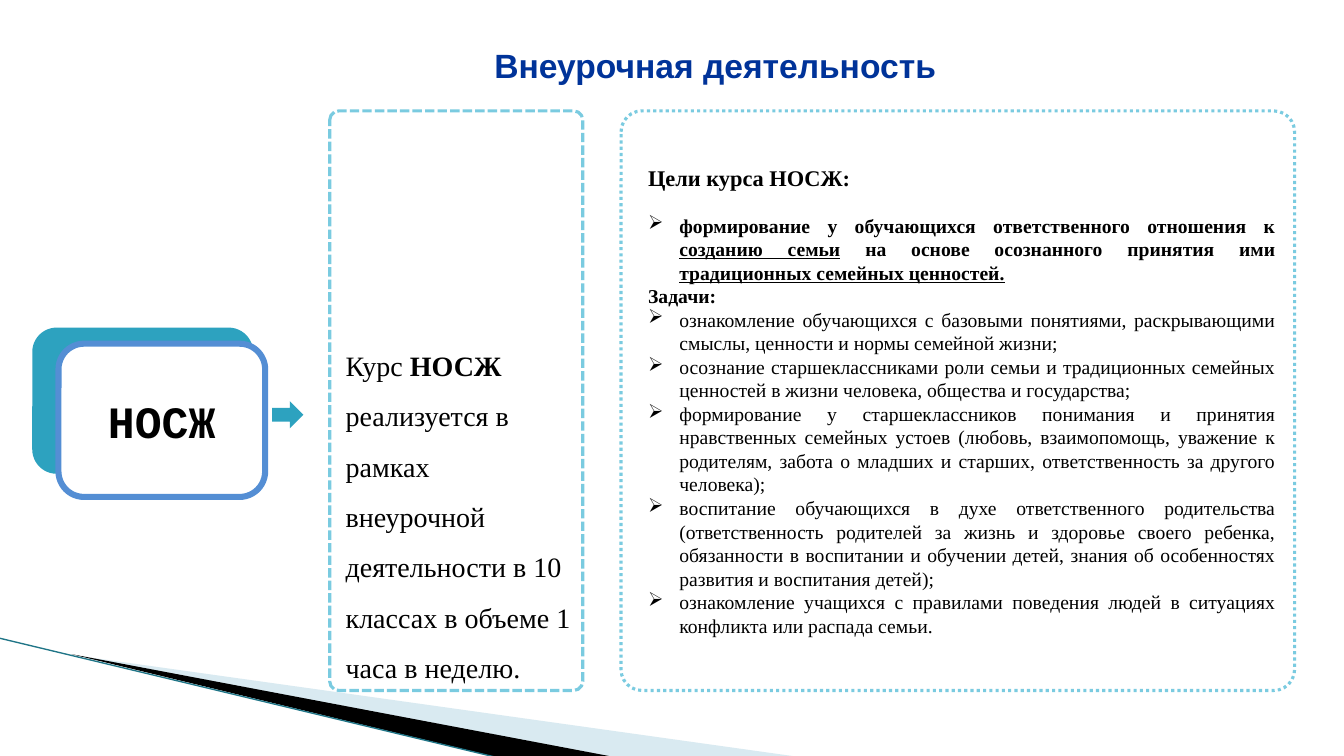
from dataclasses import dataclass

from lxml import etree
from pptx import Presentation
from pptx.dml.color import RGBColor
from pptx.enum import dml, shapes, text
from pptx.oxml.ns import qn
from pptx.util import Inches, Pt


@dataclass(frozen=True)
class Theme:
    teal: str = "2DA2BF"
    frame: str = "7ACBE0"
    badge: str = "548ED4"
    title: str = "003399"
    black: str = "000000"
    white: str = "FFFFFF"
    wedge: str = "A0CBDC"
    edge: str = "1F7587"
    sans: str = "Arial"
    mono: str = "Courier New"
    serif: str = "Times New Roman"
    badge_size: int = 32
    title_size: int = 24
    course_size: int = 20
    heading_size: int = 16
    body_size: int = 14


SHAPE = shapes.MSO_SHAPE
ALIGN = text.PP_ALIGN
DASH = dml.MSO_LINE


class SlideBuilder:
    def __init__(self, prs, theme):
        self.theme = theme
        self.s = prs.slides.add_slide(prs.slide_layouts[6])

    def style(self, sp, fill=None, line=None, width=1, dash=None):
        sp.shadow.inherit = False
        if fill:
            sp.fill.solid()
            sp.fill.fore_color.rgb = RGBColor.from_string(fill)
        else:
            sp.fill.background()
        if line:
            sp.line.color.rgb = RGBColor.from_string(line)
            sp.line.width = Pt(width)
            if dash:
                sp.line.dash_style = dash
        else:
            sp.line.fill.background()
        return sp

    def shape(self, kind, box, radius=None, **look):
        sp = self.s.shapes.add_shape(kind, *map(Inches, box))
        if radius is not None:
            sp.adjustments[0] = radius
        return self.style(sp, **look)

    def wedge(self, points, fill, alpha=None):
        """Draw a filled polygon; alpha is its opacity in percent."""
        start, *rest = [(Inches(x), Inches(y)) for x, y in points]
        builder = self.s.shapes.build_freeform(*start)
        builder.add_line_segments(rest, close=True)
        sp = self.style(builder.convert_to_shape(), fill=fill)
        if alpha:
            color = sp._element.spPr.find(".//" + qn("a:srgbClr"))
            etree.SubElement(color, qn("a:alpha"), val=str(alpha * 1000))

    def line(self, start, end, color, width):
        cx = self.s.shapes.add_connector(
            shapes.MSO_CONNECTOR.STRAIGHT, *map(Inches, start + end))
        cx.line.color.rgb = RGBColor.from_string(color)
        cx.line.width = Pt(width)
        etree.SubElement(cx._element.spPr, qn("a:effectLst"))

    def text_box(self, box):
        tf = self.s.shapes.add_textbox(*map(Inches, box)).text_frame
        tf.word_wrap = True
        return tf

    def add_runs(self, p, runs, font, size, color=None, align=ALIGN.LEFT, bullet=False):
        """Fill a paragraph from (text, marks) pairs; marks may hold b and u."""
        p.alignment = align
        if bullet:
            pPr = p._p.get_or_add_pPr()
            pPr.set("marL", str(Inches(0.31)))
            pPr.set("indent", str(-Inches(0.31)))
            etree.SubElement(pPr, qn("a:buChar"), char="➢")
        for words, marks in runs:
            r = p.add_run()
            r.text = words
            r.font.name = font
            r.font.size = Pt(size)
            r.font.bold = "b" in marks
            r.font.underline = "u" in marks
            r.font.color.rgb = RGBColor.from_string(color or self.theme.black)


GOAL = [
    ("формирование у обучающихся ответственного отношения к ", "b"),
    ("созданию семьи", "bu"),
    (" на основе осознанного принятия ими ", "b"),
    ("традиционных семейных ценностей.", "bu"),
]
TASKS = [
    "ознакомление обучающихся с базовыми понятиями, раскрывающими смыслы, "
    "ценности и нормы семейной жизни;",
    "осознание старшеклассниками роли семьи и традиционных семейных ценностей "
    "в жизни человека, общества и государства;",
    "формирование у старшеклассников понимания и принятия нравственных семейных "
    "устоев (любовь, взаимопомощь, уважение к родителям, забота о младших и "
    "старших, ответственность за другого человека);",
    "воспитание обучающихся в духе ответственного родительства (ответственность "
    "родителей за жизнь и здоровье своего ребенка, обязанности в воспитании и "
    "обучении детей, знания об особенностях развития и воспитания детей);",
    "ознакомление учащихся с правилами поведения людей в ситуациях конфликта "
    "или распада семьи.",
]
COURSE = [
    ("Курс ", ""),
    ("НОСЖ", "b"),
    (" реализуется в рамках внеурочной деятельности в 10 классах "
     "в объеме 1 часа в неделю.", ""),
]


def main():
    prs = Presentation()
    prs.slide_width, prs.slide_height = Inches(13.33), Inches(7.5)
    t = Theme()
    b = SlideBuilder(prs, t)

    b.wedge([(0.73, 6.5), (7.93, 7.51), (6.08, 7.51)], t.wedge, alpha=40)
    b.wedge([(0.71, 6.49), (6.09, 7.51), (4.96, 7.52)], t.black)
    b.line((-0.01, 6.33), (4.95, 7.52), t.edge, 0.95)

    b.shape(SHAPE.ROUNDED_RECTANGLE, (0.32, 3.25, 2.19, 1.45), fill=t.teal)
    badge = b.shape(SHAPE.ROUNDED_RECTANGLE, (0.58, 3.41, 2.05, 1.52),
                    fill=t.white, line=t.badge, width=4.33)
    tf = badge.text_frame
    tf.vertical_anchor = text.MSO_ANCHOR.MIDDLE
    b.add_runs(tf.paragraphs[0], [("НОСЖ", "b")], t.mono, t.badge_size,
               align=ALIGN.CENTER)
    b.shape(SHAPE.RIGHT_ARROW, (2.7, 3.98, 0.31, 0.27), fill=t.teal)

    for left, width, dash in [(3.27, 2.51, DASH.SQUARE_DOT),
                              (6.16, 6.68, DASH.ROUND_DOT)]:
        b.shape(SHAPE.ROUNDED_RECTANGLE, (left, 1.1, width, 5.75), radius=0.036,
                line=t.frame, width=2.25, dash=dash)

    tf = b.text_box((1.61, 0.4, 11.06, 0.5))
    b.add_runs(tf.paragraphs[0], [("Внеурочная деятельность ", "b")], t.sans,
               t.title_size, t.title, ALIGN.CENTER)

    tf = b.text_box((6.33, 1.58, 6.42, 4.85))
    p = tf.paragraphs[0]
    b.add_runs(p, [("Цели курса НОСЖ: ", "b")], t.serif, t.heading_size,
               align=ALIGN.JUSTIFY)
    p.space_after = Pt(16)
    entries = [(GOAL, True), ([("Задачи: ", "b")], False)]
    entries += [([(task, "")], True) for task in TASKS]
    for runs, bullet in entries:
        b.add_runs(tf.add_paragraph(), runs, t.serif, t.body_size,
                   align=ALIGN.JUSTIFY, bullet=bullet)

    tf = b.text_box((3.33, 3.24, 2.45, 3.64))
    p = tf.paragraphs[0]
    b.add_runs(p, COURSE, t.serif, t.course_size)
    p.line_spacing = 1.5

    prs.save("out.pptx")


if __name__ == "__main__":
    main()
